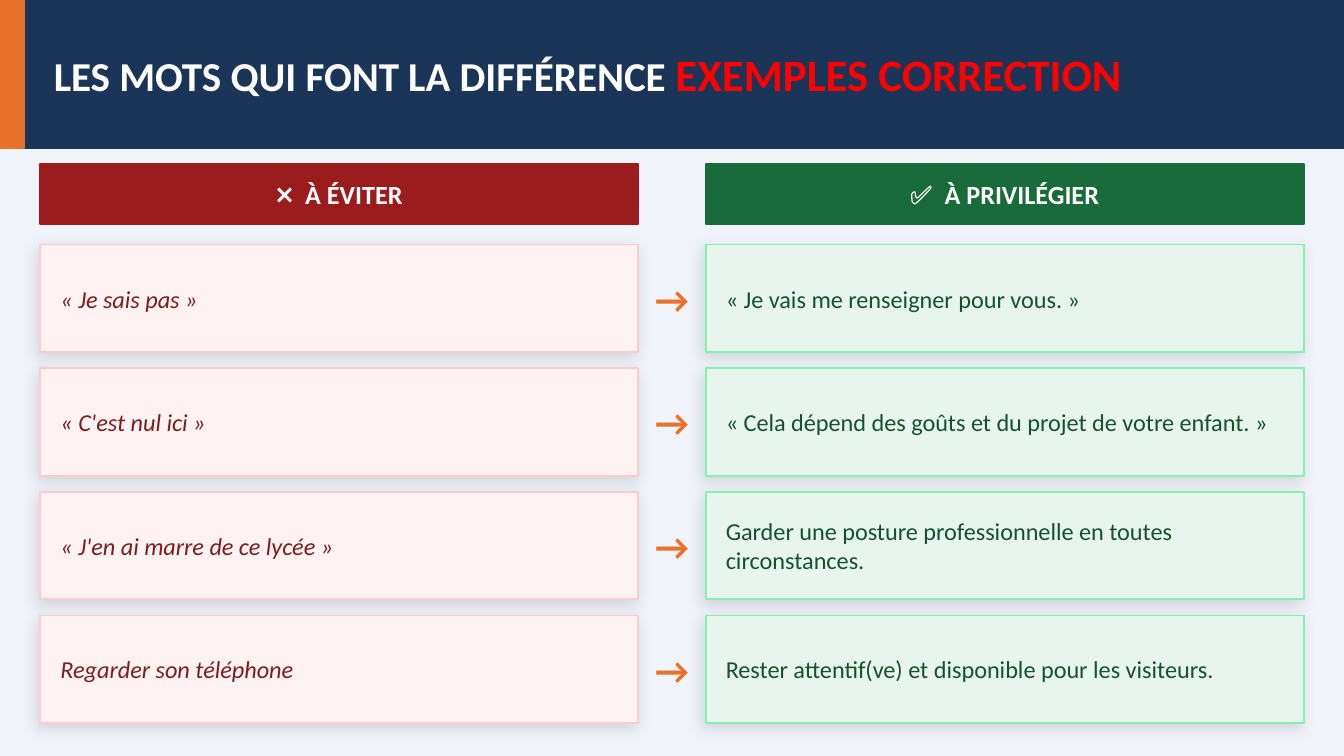
from lxml.etree import SubElement
from pptx import Presentation
from pptx.dml.color import RGBColor
from pptx.enum.shapes import MSO_SHAPE as Shape
from pptx.enum.text import MSO_ANCHOR as Anchor, MSO_AUTO_SIZE as AutoSize, PP_ALIGN as Align
from pptx.oxml.ns import qn
from pptx.util import Inches, Pt

FONT = "Calibri"
WHITE = RGBColor(0xFF, 0xFF, 0xFF)
RED = RGBColor(0xFF, 0x00, 0x00)
PALE_BLUE = RGBColor(0xF0, 0xF4, 0xFA)
NAVY = RGBColor(0x1A, 0x35, 0x57)
ORANGE = RGBColor(0xE8, 0x72, 0x2A)
DARK_RED = RGBColor(0x9B, 0x1C, 0x1C)
DARK_GREEN = RGBColor(0x1A, 0x6B, 0x3A)

# Card formats of the two columns
AVOID = {"fill": RGBColor(0xFE, 0xF2, 0xF2), "line": RGBColor(0xFE, 0xCA, 0xCA),
         "text": RGBColor(0x7F, 0x1D, 0x1D), "italic": True}
PREFER = {"fill": RGBColor(0xE8, 0xF5, 0xEE), "line": RGBColor(0x86, 0xEF, 0xAC),
          "text": RGBColor(0x14, 0x53, 0x2D), "italic": False}

PHRASES = [
    ("« Je sais pas »", "« Je vais me renseigner pour vous. »"),
    ("« C'est nul ici »", "« Cela dépend des goûts et du projet de votre enfant. »"),
    ("« J'en ai marre de ce lycée »",
     "Garder une posture professionnelle en toutes circonstances."),
    ("Regarder son téléphone", "Rester attentif(ve) et disponible pour les visiteurs."),
]


def write(shape, runs, align=Align.LEFT, side=0):
    """Fill a shape with runs given as (text, size, colour, font formats)."""
    frame = shape.text_frame
    settings = {"word_wrap": True, "auto_size": AutoSize.NONE,
                "vertical_anchor": Anchor.MIDDLE, "margin_left": Inches(side),
                "margin_right": Inches(side), "margin_top": 0, "margin_bottom": 0}
    for name, value in settings.items():
        setattr(frame, name, value)
    paragraph = frame.paragraphs[0]
    paragraph.alignment = align
    for text, size, colour, formats in runs:
        run = paragraph.add_run()
        run.text = text
        run.font.color.rgb = colour
        for name, value in {"name": FONT, "size": Pt(size), **formats}.items():
            setattr(run.font, name, value)


def add_rect(slide, left, top, width, height, fill, line=None):
    rect = slide.shapes.add_shape(Shape.RECTANGLE, Inches(left), Inches(top),
                                  Inches(width), Inches(height))
    rect.shadow.inherit = False
    rect.fill.solid()
    rect.fill.fore_color.rgb = fill
    rect.line.color.rgb = line or fill
    rect.line.width = Pt(1)
    return rect


def add_soft_shadow(shape):
    effects = shape.element.spPr.find(qn("a:effectLst"))
    shadow = SubElement(effects, qn("a:outerShdw"), blurRad=str(Pt(8)), dist=str(Pt(3)),
                        dir=str(135 * 60000), algn="bl", rotWithShape="0")
    black = SubElement(shadow, qn("a:srgbClr"), val="000000")
    SubElement(black, qn("a:alpha"), val="13000")


def add_banner(slide, left, top, width, height):
    add_rect(slide, left, top, width, height, NAVY)
    add_rect(slide, left, top, 0.18, height, ORANGE)
    title = slide.shapes.title
    title.left, title.top = Inches(left + 0.4), Inches(top + 0.2)
    title.width, title.height = Inches(width - 1), Inches(height - 0.4)
    write(title, [("LES MOTS QUI FONT LA DIFFÉRENCE ", 22, WHITE, {"bold": True}),
                  ("EXEMPLES CORRECTION", 24, RED, {"bold": True})])
    # Bring the title in front of the banner
    title.element.getparent().append(title.element)


def add_heading(slide, left, top, width, text, fill):
    heading = add_rect(slide, left, top, width, 0.45, fill)
    write(heading, [(text, 14, WHITE, {"bold": True})], Align.CENTER)


def add_card(slide, left, top, width, height, text, style):
    card = add_rect(slide, left, top, width, height, style["fill"], style["line"])
    add_soft_shadow(card)
    write(card, [(text, 13, style["text"], {"italic": style["italic"]})], side=0.15)


def add_arrow(slide, center, middle):
    width, height = 0.7, 0.36
    arrow = slide.shapes.add_textbox(Inches(center - width / 2), Inches(middle - height / 2),
                                     Inches(width), Inches(height))
    write(arrow, [("→", 20, ORANGE, {"bold": True})], Align.CENTER)


def add_comparison(slide, left, top, width):
    gutter, card_height, row_gap = 0.5, 0.8, 0.12
    column = (width - gutter) / 2
    right = left + column + gutter

    # Column headings
    add_heading(slide, left, top, column, "❌  À ÉVITER", DARK_RED)
    add_heading(slide, right, top, column, "✅  À PRIVILÉGIER", DARK_GREEN)

    # Pairs of phrases joined by arrows
    for row, (avoided, preferred) in enumerate(PHRASES):
        row_top = top + 0.6 + row * (card_height + row_gap)
        add_card(slide, left, row_top, column, card_height, avoided, AVOID)
        add_card(slide, right, row_top, column, card_height, preferred, PREFER)
        add_arrow(slide, left + width / 2, row_top + card_height / 2)


def main():
    deck = Presentation()
    # Widescreen, 16:9
    deck.slide_width, deck.slide_height = Inches(10), Inches(10 * 9 / 16)
    slide = deck.slides.add_slide(deck.slide_layouts[5])
    slide.background.fill.solid()
    slide.background.fill.fore_color.rgb = PALE_BLUE
    add_banner(slide, 0, 0, 10, 1.1)
    add_comparison(slide, 0.3, 1.22, 9.4)
    deck.save("out.pptx")


if __name__ == "__main__":
    main()
